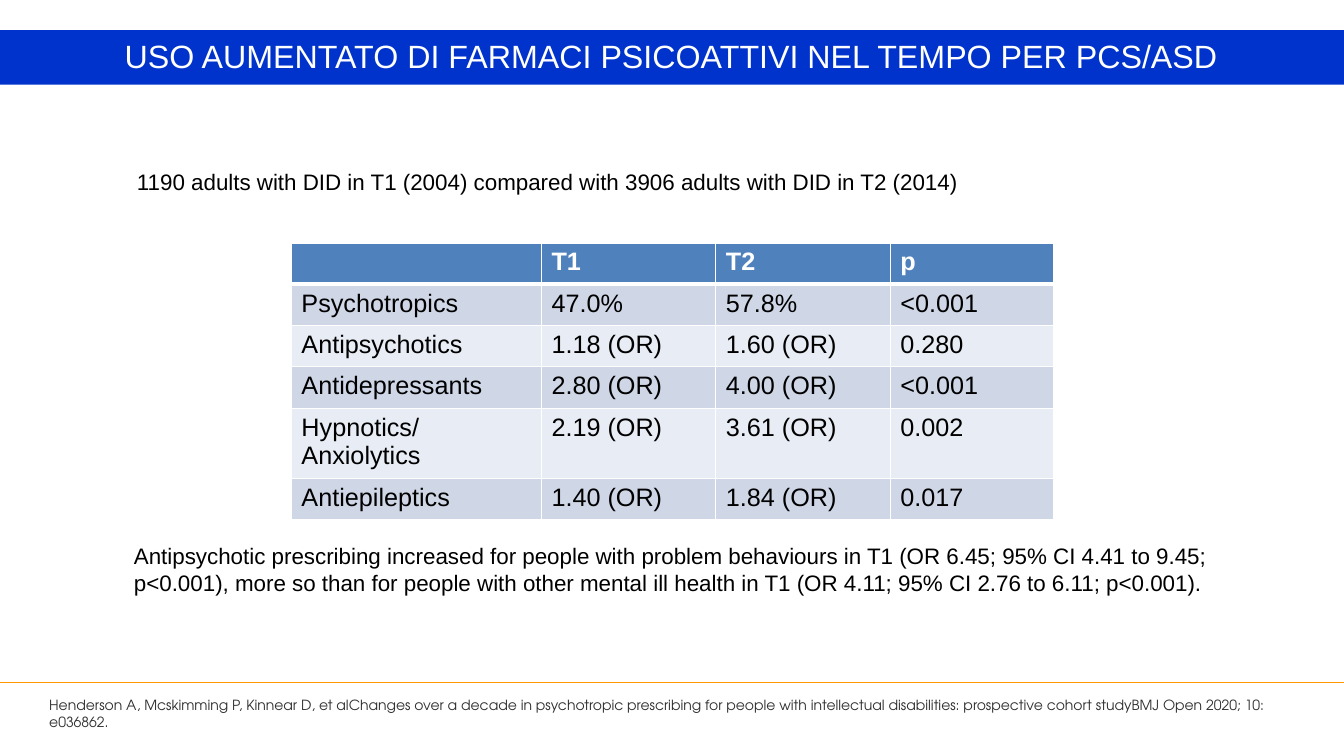
from lxml import etree
from pptx import Presentation
from pptx.dml.color import RGBColor
from pptx.enum.shapes import MSO_CONNECTOR, MSO_SHAPE
from pptx.enum.text import MSO_AUTO_SIZE, PP_ALIGN
from pptx.oxml.ns import qn
from pptx.util import Inches, Pt

RECTANGLE = MSO_SHAPE.RECTANGLE
STRAIGHT = MSO_CONNECTOR.STRAIGHT
FIT_SHAPE = MSO_AUTO_SIZE.SHAPE_TO_FIT_TEXT
LEFT, CENTER = PP_ALIGN.LEFT, PP_ALIGN.CENTER

SLIDE_WIDTH, SLIDE_HEIGHT = 13.33, 7.5
WHITE, BLACK = "FFFFFF", "000000"
BANNER_BLUE, HEADER_BLUE = "0033CC", "4F81BD"
BAND_FILLS = ("E8ECF4", "CFD7E7")
ORANGE, CITATION_GREY = "FF9900", "303030"

TITLE = "USO AUMENTATO DI FARMACI PSICOATTIVI NEL TEMPO PER PCS/ASD"
SAMPLE = "1190 adults with DID in T1 (2004) compared with 3906 adults with DID in T2 (2014)"
FINDING = (
    "Antipsychotic prescribing increased for people with problem behaviours in T1 "
    "(OR 6.45; 95% CI 4.41 to 9.45; p<0.001), more so than for people with other "
    "mental ill health in T1 (OR 4.11; 95% CI 2.76 to 6.11; p<0.001)."
)
CITATION = (
    "Henderson A, Mcskimming P, Kinnear D, et alChanges over a decade in psychotropic "
    "prescribing for people with intellectual disabilities: prospective cohort "
    "studyBMJ Open 2020; 10: e036862."
)
PRESCRIBING = (
    ("", "T1", "T2", "p"),
    ("Psychotropics", "47.0%", "57.8%", "<0.001"),
    ("Antipsychotics", "1.18 (OR)", "1.60 (OR)", "0.280"),
    ("Antidepressants", "2.80 (OR)", "4.00 (OR)", "<0.001"),
    ("Hypnotics/Anxiolytics", "2.19 (OR)", "3.61 (OR)", "0.002"),
    ("Antiepileptics", "1.40 (OR)", "1.84 (OR)", "0.017"),
)
COLUMN_WIDTHS = (2.48, 1.73, 1.73, 1.62)
ROW_HEIGHT = 0.41


def color(value):
    return RGBColor.from_string(value)


def write(frame, text, size=16, font="Arial", fill=BLACK, bold=False, align=LEFT):
    paragraph = frame.paragraphs[0]
    paragraph.alignment = align
    run = paragraph.add_run()
    run.text = text
    run.font.size = Pt(size)
    run.font.name = font
    run.font.bold = bold
    run.font.color.rgb = color(fill)


def add_text(slide, left, top, width, height, text, **style):
    box = slide.shapes.add_textbox(*map(Inches, (left, top, width, height)))
    box.text_frame.word_wrap = True
    box.text_frame.auto_size = FIT_SHAPE
    write(box.text_frame, text, **style)


def add_banner(slide, left, top, width, height):
    banner = slide.shapes.add_shape(RECTANGLE, *map(Inches, (left, top, width, height)))
    banner.shadow.inherit = False
    banner.fill.solid()
    banner.fill.fore_color.rgb = color(BANNER_BLUE)
    banner.line.fill.background()


def add_footer_rule(slide, top):
    rule = slide.shapes.add_connector(
        STRAIGHT, Inches(0), Inches(top), Inches(SLIDE_WIDTH), Inches(top)
    )
    rule.line.color.rgb = color(ORANGE)
    rule.line.width = Pt(0.75)
    etree.SubElement(rule._element.spPr, qn("a:effectLst"))


def set_borders(cell, widths):
    properties = cell._tc.get_or_add_tcPr()
    for position, (side, width) in enumerate(widths.items()):
        border = etree.Element(qn(f"a:ln{side}"), w=str(Pt(width)))
        solid = etree.SubElement(border, qn("a:solidFill"))
        etree.SubElement(solid, qn("a:srgbClr"), val=WHITE)
        properties.insert(position, border)


def add_prescribing_table(slide, left, top):
    table = slide.shapes.add_table(
        len(PRESCRIBING), len(COLUMN_WIDTHS), Inches(left), Inches(top),
        Inches(sum(COLUMN_WIDTHS)), Inches(ROW_HEIGHT * len(PRESCRIBING)),
    ).table
    for column, width in zip(table.columns, COLUMN_WIDTHS):
        column.width = Inches(width)
    for row_index, values in enumerate(PRESCRIBING):
        header = row_index == 0
        table.rows[row_index].height = Inches(ROW_HEIGHT)
        for column_index, value in enumerate(values):
            cell = table.cell(row_index, column_index)
            cell.fill.solid()
            cell.fill.fore_color.rgb = color(
                HEADER_BLUE if header else BAND_FILLS[row_index % 2]
            )
            set_borders(cell, {
                "L": 1, "R": 1,
                "T": 3 if row_index == 1 else 1,
                "B": 3 if header else 1,
            })
            if value:
                write(cell.text_frame, value, size=18, bold=header,
                      fill=WHITE if header else BLACK)


def main():
    deck = Presentation()
    deck.slide_width = Inches(SLIDE_WIDTH)
    deck.slide_height = Inches(SLIDE_HEIGHT)
    slide = deck.slides.add_slide(deck.slide_layouts[6])

    add_text(slide, 1.23, 5.33, 11.65, 0.64, FINDING)
    add_prescribing_table(slide, 2.89, 2.41)
    add_text(slide, 1.26, 1.62, 8.48, 0.37, SAMPLE)
    add_footer_rule(slide, 6.77)
    add_text(slide, 0.39, 6.86, 12.74, 0.44, CITATION,
             size=10, font="TeX Gyre Adventor", fill=CITATION_GREY)
    add_banner(slide, -0.01, 0.3, 13.35, 0.54)
    add_text(slide, 0, 0.31, SLIDE_WIDTH, 0.5, TITLE,
             size=23, fill=WHITE, align=CENTER)

    deck.save("out.pptx")


if __name__ == "__main__":
    main()
